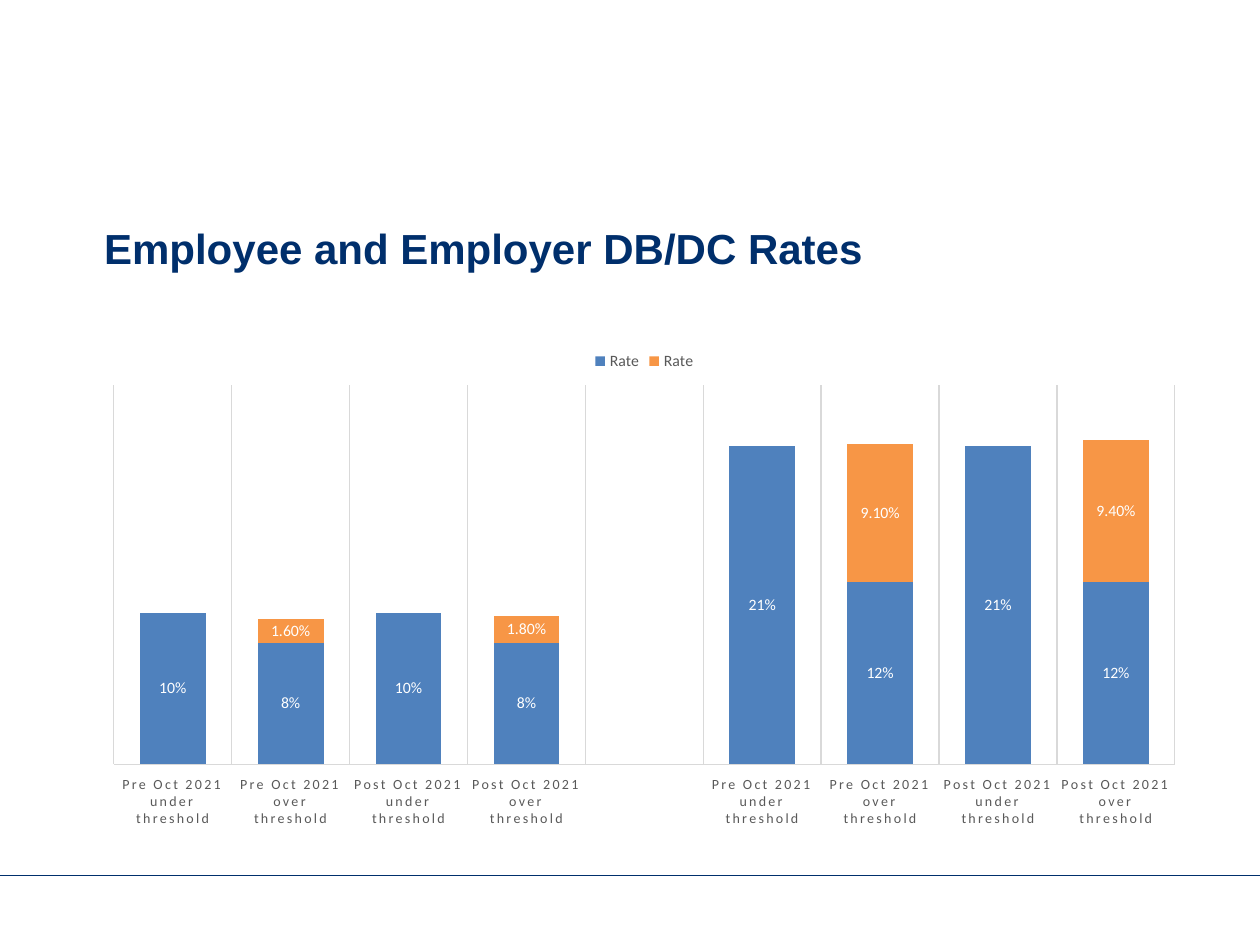
from lxml import etree
from pptx import Presentation
from pptx.chart.data import CategoryChartData
from pptx.dml.color import RGBColor
from pptx.enum.chart import (
    XL_CHART_TYPE as ChartType,
    XL_LABEL_POSITION as LabelPosition,
    XL_LEGEND_POSITION as LegendPosition,
    XL_TICK_LABEL_POSITION as TickLabels,
    XL_TICK_MARK as TickMark,
)
from pptx.enum.shapes import MSO_CONNECTOR as Connector
from pptx.enum.text import MSO_ANCHOR as Anchor
from pptx.oxml.ns import qn
from pptx.util import Cm, Pt

NAVY, GREY, PALE, WHITE = "002F6C", "595959", "D9D9D9", "FFFFFF"
BLUE, ORANGE = "4F81BD", "F79646"

PERIODS = [f"{when} Oct 2021 {side} threshold"
           for when in ("Pre", "Post") for side in ("under", "over")]
# The empty category separates employee rates from employer rates
GROUPS = PERIODS + [""] + PERIODS
# Values, number format and colour of each stacked series
RATES = [
    ([0.1, 0.08, 0.1, 0.08, None, 0.21, 0.12, 0.21, 0.12], "0%", BLUE),
    ([None, 0.016, None, 0.018, None, None, 0.091, None, 0.094], "0.00%", ORANGE),
]


def colour(code):
    return RGBColor.from_string(code)


def style_font(font, size, code, name="Calibri", bold=False):
    font.size, font.name, font.bold = Pt(size), name, bold
    font.color.rgb = colour(code)


def style_line(line, code, width):
    line.color.rgb = colour(code)
    line.width = Pt(width)


def add_text(slide, text, left, top, width, height, **style):
    frame = slide.shapes.add_textbox(Cm(left), Cm(top), Cm(width), Cm(height)).text_frame
    frame.word_wrap = True
    frame.vertical_anchor = Anchor.TOP
    run = frame.paragraphs[0].add_run()
    run.text = text
    style_font(run.font, **style)


def add_footer_rule(slide, left, top, width):
    rule = slide.shapes.add_connector(
        Connector.STRAIGHT, Cm(left), Cm(top), Cm(left + width), Cm(top))
    style_line(rule.line, NAVY, 1)
    etree.SubElement(rule._element.spPr, qn("a:effectLst"))


def add_rates_chart(slide, left, top, width, height):
    rates = CategoryChartData()
    rates.categories = GROUPS
    for values, number_format, _ in RATES:
        rates.add_series("Rate", values, number_format)
    chart = slide.shapes.add_chart(
        ChartType.COLUMN_STACKED, Cm(left), Cm(top), Cm(width), Cm(height), rates).chart
    style_font(chart.font, 10, "000000")
    chart.has_title = False

    # Legend
    chart.has_legend = True
    chart.legend.position = LegendPosition.TOP
    chart.legend.include_in_layout = False
    style_font(chart.legend.font, 9, GREY)

    # Category axis, with widely spaced letters
    periods = chart.category_axis
    periods.major_tick_mark = periods.minor_tick_mark = TickMark.NONE
    periods.tick_label_position = TickLabels.LOW
    periods.has_major_gridlines = True
    style_line(periods.major_gridlines.format.line, PALE, 0.75)
    style_line(periods.format.line, PALE, 0.75)
    style_font(periods.tick_labels.font, 8, GREY)
    periods._element.find(".//" + qn("a:defRPr")).set("spc", "120")

    # Hidden value axis
    scale = chart.value_axis
    scale.minimum_scale, scale.maximum_scale = 0, 0.25
    scale.has_major_gridlines = False
    scale.tick_labels.number_format = "0%"
    scale.tick_labels.number_format_is_linked = False
    scale.visible = False

    # Stacked columns
    plot = chart.plots[0]
    plot.gap_width, plot.overlap = 79, 100
    plot.vary_by_categories = False
    for series, (_, number_format, code) in zip(plot.series, RATES):
        series.format.fill.solid()
        series.format.fill.fore_color.rgb = colour(code)
        series.invert_if_negative = False
        labels = series.data_labels
        labels.show_value = True
        labels.position = LabelPosition.CENTER
        labels.number_format = number_format
        labels.number_format_is_linked = False
        style_font(labels.font, 9, WHITE)


def main():
    deck = Presentation()
    deck.slide_width, deck.slide_height = Cm(25.4), Cm(19.05)
    slide = deck.slides.add_slide(deck.slide_layouts[6])
    left, width = 1.85, 22.28
    add_footer_rule(slide, 0, 17.65, 25.4)
    add_text(slide, "Employee and Employer DB/DC Rates", left, 4.37, width, 2.13,
             size=24, code=NAVY, name="Arial", bold=True)
    add_rates_chart(slide, left, 6.81, width, 10.08)
    deck.save("out.pptx")


if __name__ == "__main__":
    main()
